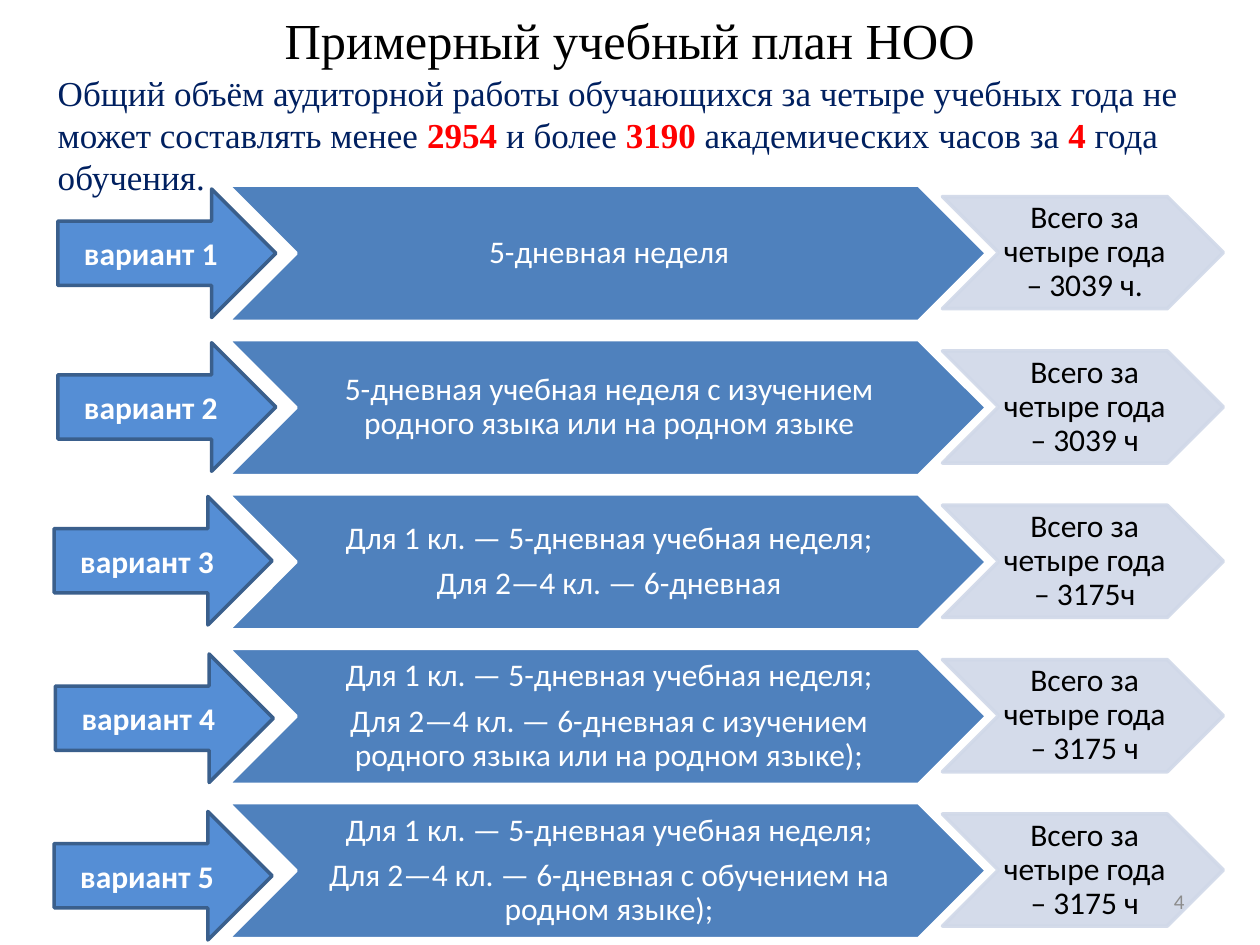
from lxml.etree import SubElement
from pptx import Presentation
from pptx.dml.color import RGBColor
from pptx.enum.shapes import MSO_SHAPE as Shape
from pptx.enum.text import MSO_ANCHOR as Anchor, MSO_AUTO_SIZE as AutoSize, PP_ALIGN as Align
from pptx.oxml.ns import qn
from pptx.util import Inches, Pt

TITLE = "Примерный учебный план НОО"
INTRO = [  # (text, highlighted)
    ("Общий объём аудиторной работы обучающихся за четыре учебных года не может составлять менее ", False),
    ("2954 ", True),
    ("и более ", False),
    ("3190", True),
    (" академических часов за ", False),
    ("4", True),
    (" года обучения.", False),
]
FIRST_GRADE = "Для 1 кл. — 5-дневная учебная неделя;"
VARIANTS = [  # (schedule paragraphs, hours, label left, label top)
    (["5-дневная неделя"], "3039 ч.", 0.46, 1.5),
    (["5-дневная учебная неделя с изучением родного языка или на родном языке"], "3039 ч", 0.46, 2.72),
    ([FIRST_GRADE, "Для 2—4 кл. — 6-дневная"], "3175ч", 0.43, 3.94),
    ([FIRST_GRADE, "Для 2—4 кл. — 6-дневная с изучением родного языка или на родном языке);"], "3175 ч", 0.44, 5.19),
    ([FIRST_GRADE, "Для 2—4 кл. — 6-дневная с обучением на родном языке);"], "3175 ч", 0.43, 6.44),
]
PAGE_NUMBER = "4"

SERIF, SANS = "Times New Roman", "Calibri"
ROW_TOP, ROW_PITCH = 1.47, 1.225
TOTAL_OFFSET = 0.09


def rgb(value):
    return RGBColor.from_string(value)


def style_span(span, size, color, font=SANS, bold=False):
    span.font.size = Pt(size)
    span.font.name = font
    span.font.bold = bold
    span.font.color.rgb = rgb(color)


def add_block(page, kind, place, fill, line, paragraphs, color, bold=False):
    """Add a filled preset shape with centred 18 pt text."""
    block = page.shapes.add_shape(kind, *map(Inches, place))
    block.shadow.inherit = False
    block.fill.solid()
    block.fill.fore_color.rgb = rgb(fill)
    block.line.color.rgb = rgb(line)
    block.line.width = Pt(2)
    frame = block.text_frame
    frame.word_wrap = True
    frame.vertical_anchor = Anchor.MIDDLE
    frame.text = "\n".join(paragraphs)
    for para in frame.paragraphs:
        para.alignment = Align.CENTER
        style_span(para.runs[0], 18, color, bold=bold)
    return block


def tighten(block):
    """Narrow the margins and line spacing of a chevron."""
    frame = block.text_frame
    frame.margin_left, frame.margin_right = Inches(0.03), 0
    frame.margin_top = frame.margin_bottom = Inches(0.01)
    for para in frame.paragraphs:
        para.line_spacing = 0.9
        para.space_after = Pt(6.3)


def set_opacity(block, percent):
    """Apply the opacity to both fill and outline."""
    for color in block._element.spPr.iter(qn("a:srgbClr")):
        SubElement(color, qn("a:alpha"), val=str(percent * 1000))


def add_variant(page, index, schedule, hours, label_left, label_top):
    top = ROW_TOP + index * ROW_PITCH
    tighten(add_block(page, Shape.CHEVRON, (1.81, top, 6.02, 1.08),
                      "4F81BD", "FFFFFF", schedule, "FFFFFF"))
    total = add_block(page, Shape.CHEVRON, (7.48, top + TOTAL_OFFSET, 2.23, 0.89),
                      "D0D8E8", "D0D8E8", [f"Всего за четыре года – {hours}"], "000000")
    tighten(total)
    set_opacity(total, 90)
    add_block(page, Shape.RIGHT_ARROW, (label_left, label_top, 1.73, 1.02),
              "558ED5", "3A5F8C", [f"вариант {index + 1}"], "FFFFFF", bold=True)


def add_title(page):
    title = page.shapes.title
    title.left, title.top, title.width, title.height = map(Inches, (0.5, 0.03, 9, 0.56))
    frame = title.text_frame
    frame.text = TITLE
    frame.auto_size = AutoSize.NONE
    frame.vertical_anchor = Anchor.MIDDLE
    frame.paragraphs[0].alignment = Align.CENTER
    style_span(frame.paragraphs[0].runs[0], 28.8, "000000", SERIF)


def add_intro(page):
    box = page.shapes.add_textbox(*map(Inches, (0.36, 0.52, 9.61, 1.11)))
    box.text_frame.word_wrap = True
    box.text_frame.auto_size = AutoSize.SHAPE_TO_FIT_TEXT
    para = box.text_frame.paragraphs[0]
    for text, highlighted in INTRO:
        span = para.add_run()
        span.text = text
        style_span(span, 20, "FF0000" if highlighted else "002060", SERIF, highlighted)


def add_page_number(page):
    box = page.shapes.add_textbox(*map(Inches, (7.17, 6.95, 2.33, 0.4)))
    frame = box.text_frame
    frame.word_wrap = True
    frame.vertical_anchor = Anchor.MIDDLE
    frame.text = PAGE_NUMBER
    frame.paragraphs[0].alignment = Align.RIGHT
    style_span(frame.paragraphs[0].runs[0], 12, "8C8C8C")


def main():
    deck = Presentation()
    deck.slide_width, deck.slide_height = Inches(10), Inches(7.5)
    page = deck.slides.add_slide(deck.slide_layouts[5])
    add_title(page)
    for index, variant in enumerate(VARIANTS):
        add_variant(page, index, *variant)
    add_page_number(page)
    add_intro(page)
    deck.save("out.pptx")


if __name__ == "__main__":
    main()
